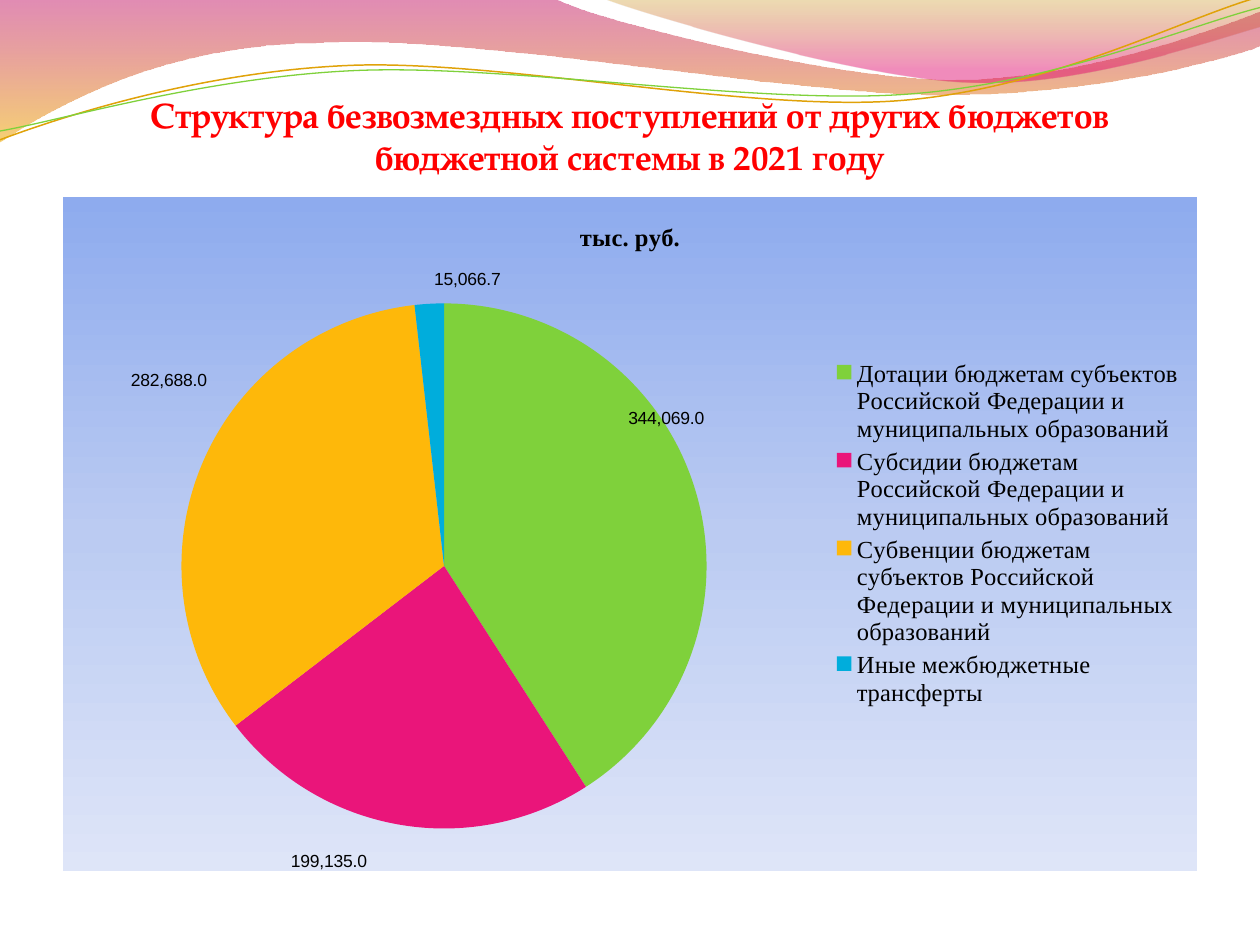
from dataclasses import dataclass
from typing import Optional

from lxml.etree import SubElement
from pptx import Presentation
from pptx.chart.data import CategoryChartData
from pptx.dml.color import RGBColor
from pptx.enum.chart import XL_CHART_TYPE, XL_LABEL_POSITION, XL_LEGEND_POSITION
from pptx.enum.text import MSO_ANCHOR, MSO_AUTO_SIZE, PP_ALIGN
from pptx.oxml import parse_xml
from pptx.oxml.ns import qn
from pptx.util import Cm, Pt

TITLE_FONT = "TeX Gyre Pagella"
CHART_FONT = "Times New Roman"
LABEL_FONT = "Arial"
UNIT = 2.54  # centimetres per unit of the wave coordinates


@dataclass
class Stop:
    position: int
    color: str
    opacity: int = 100


@dataclass
class Wave:
    """A segment holds one end point, or two control points and an end point."""
    start: tuple
    segments: list
    stops: Optional[list] = None
    line: str = ""
    width: float = 0


@dataclass
class Slice:
    name: str
    value: float
    color: str
    label_shift: tuple


WAVES = [
    Wave((0, -0.01), [
        ((4.4, -0.01),),
        ((4.76, 0.17), (6.64, 0.63), (7.58, 0.63)),
        ((8.53, 0.63), (9.58, 0.26), (10, 0.09)),
        ((10.01, 0.36),),
        ((9.83, 0.44), (8.7, 0.76), (7.46, 0.75)),
        ((6.22, 0.75), (3.82, 0.28), (2.57, 0.34)),
        ((1.29, 0.35), (0.46, 0.83), (-0.01, 1.13)),
        ((0, -0.01),),
    ], [Stop(0, "BD0059", 45), Stop(100, "F0AB00", 55)]),
    Wave((4.79, -0.01), [
        ((5.09, 0.11), (6.82, 0.62), (7.69, 0.65)),
        ((8.56, 0.69), (9.61, 0.32), (10, 0.21)),
        ((10, 0),),
        ((4.79, -0.01),),
    ], [Stop(0, "C38B00", 30), Stop(80, "E1006B", 45)]),
    Wave((0, 1.11), [
        ((0.48, 0.93), (1.58, 0.57), (2.77, 0.52)),
        ((3.95, 0.47), (5.93, 0.89), (7.13, 0.8)),
        ((8.33, 0.71), (9.38, 0.15), (9.98, -0.02)),
    ], line="E0A209", width=0.85),
    Wave((0, 1.04), [
        ((0.47, 0.96), (1.64, 0.61), (2.83, 0.56)),
        ((4.03, 0.51), (5.97, 0.83), (7.17, 0.75)),
        ((8.36, 0.67), (9.41, 0.21), (10, 0.06)),
    ], line="7FD13B", width=0.75),
]

SLICES = [
    Slice("Дотации бюджетам субъектов Российской Федерации и муниципальных образований",
          344069, "7FD13B", (-6.6, -9.2)),
    Slice("Субсидии бюджетам Российской Федерации и муниципальных образований",
          199135, "EA157A", (-2.7, 3)),
    Slice("Субвенции бюджетам субъектов Российской Федерации и муниципальных образований",
          282688, "FEB80A", (1, -10.4)),
    Slice("Иные межбюджетные трансферты", 15066.7, "00ADDC", (3.4, -1)),
]
CHART_STOPS = [Stop(0, "8EABEE"), Stop(50, "BBCBF2"), Stop(100, "DEE5F8")]


def rgb(color: str) -> RGBColor:
    return RGBColor.from_string(color)


def set_font(font, name: str, size: float, color: str = "000000", bold: bool = False) -> None:
    font.name, font.size, font.bold = name, Pt(size), bold
    font.color.rgb = rgb(color)


def gradient(stops: list):
    """Return a top-to-bottom gradient fill element."""
    stops_xml = "".join(
        f'<a:gs pos="{stop.position * 1000}"><a:srgbClr val="{stop.color}">'
        f'<a:alpha val="{stop.opacity * 1000}"/></a:srgbClr></a:gs>' for stop in stops)
    return parse_xml(
        '<a:gradFill xmlns:a="http://schemas.openxmlformats.org/drawingml/2006/main" '
        f'rotWithShape="1"><a:gsLst>{stops_xml}</a:gsLst>'
        '<a:lin ang="5400000" scaled="0"/></a:gradFill>')


def bend(sp, segments: list) -> None:
    """Turn each run of three straight steps into one Bezier curve."""
    steps = iter(list(sp._element.iter(qn("a:lnTo"))))
    for segment in segments:
        group = [next(steps) for _ in segment]
        if len(group) == 3:
            curve = SubElement(group[0].getparent(), qn("a:cubicBezTo"))
            group[0].addprevious(curve)
            for step in group:
                curve.append(step[0])
                step.getparent().remove(step)


def add_wave(s, wave: Wave) -> None:
    points = [wave.start, *(point for segment in wave.segments for point in segment)]
    vertices = [(Cm(x * UNIT), Cm(y * UNIT)) for x, y in points]
    builder = s.shapes.build_freeform(*vertices[0], scale=1.0)
    builder.add_line_segments(vertices[1:], close=bool(wave.stops))
    sp = builder.convert_to_shape()
    bend(sp, wave.segments)
    sp.shadow.inherit = False
    sp.fill.background()
    if wave.stops:
        no_fill = sp._element.spPr.find(qn("a:noFill"))
        no_fill.getparent().replace(no_fill, gradient(wave.stops))
        sp.line.fill.background()
    else:
        sp.line.color.rgb = rgb(wave.line)
        sp.line.width = Pt(wave.width)


def set_layout(parent, index: int, modes: Optional[dict] = None, **percents) -> None:
    """Place a chart part by hand, in percent of the chart."""
    for old in parent.findall(qn("c:layout")):
        parent.remove(old)
    layout = SubElement(parent, qn("c:layout"))
    parent.insert(index, layout)
    manual = SubElement(layout, qn("c:manualLayout"))
    fractions = {name: value / 100 for name, value in percents.items()}
    for name, value in {**(modes or {}), **fractions}.items():
        SubElement(manual, qn(f"c:{name}")).set("val", str(value))


def add_title(s, text: str) -> None:
    title = s.shapes.title
    s.shapes._spTree.append(title._element)
    title.left, title.top, title.width, title.height = Cm(1.27), Cm(1.94), Cm(22.86), Cm(1.63)
    tf = title.text_frame
    tf.word_wrap, tf.auto_size = True, MSO_AUTO_SIZE.NONE
    tf.vertical_anchor = MSO_ANCHOR.BOTTOM
    tf.margin_left = tf.margin_right = tf.margin_bottom = 0
    tf.margin_top = Cm(0.13)
    p = tf.paragraphs[0]
    p.alignment = PP_ALIGN.CENTER
    r = p.add_run()
    r.text = text
    set_font(r.font, TITLE_FONT, 20, "FF0000", bold=True)


def add_pie(s, name: str, slices: list) -> None:
    data = CategoryChartData(number_format="#,##0.0")
    data.categories = [item.name for item in slices]
    data.add_series(name, [item.value for item in slices])
    chart = s.shapes.add_chart(XL_CHART_TYPE.PIE, Cm(1.27), Cm(3.97),
                               Cm(22.86), Cm(13.59), data).chart
    set_font(chart.font, TITLE_FONT, 18)

    chart.has_title = True
    r = chart.chart_title.text_frame.paragraphs[0].add_run()
    r.text = name
    set_font(r.font, CHART_FONT, 14, bold=True)

    chart.has_legend = True
    legend = chart.legend
    legend.position, legend.include_in_layout = XL_LEGEND_POSITION.RIGHT, False
    set_font(legend.font, CHART_FONT, 14)
    edges = {"xMode": "edge", "yMode": "edge"}
    set_layout(legend._element, 1, edges, x=67.8, y=23.4, w=31, h=53)

    plot = chart.plots[0]
    plot.vary_by_categories = True
    set_layout(plot._element.getparent(), 0, {"layoutTarget": "inner", **edges},
               x=10.1, y=15.8, w=47, h=77.9)
    series = plot.series[0]
    for index, item in enumerate(slices):
        point = series.points[index]
        point.format.fill.solid()
        point.format.fill.fore_color.rgb = rgb(item.color)
        label = point.data_label
        set_font(label.font, LABEL_FONT, 10)
        label.position = XL_LABEL_POSITION.OUTSIDE_END
        x, y = item.label_shift
        set_layout(label._dLbl, 1, x=x, y=y)
    for leader_lines in series._element.iter(qn("c:showLeaderLines")):
        leader_lines.set("val", "0")

    chart_space = chart._chartSpace
    sp_pr = SubElement(chart_space, qn("c:spPr"))
    sp_pr.append(gradient(CHART_STOPS))
    SubElement(SubElement(sp_pr, qn("a:ln")), qn("a:noFill"))
    chart_space.find(qn("c:txPr")).addprevious(sp_pr)


def main() -> None:
    prs = Presentation()
    prs.slide_width, prs.slide_height = Cm(25.4), Cm(19.05)
    s = prs.slides.add_slide(prs.slide_layouts[5])
    for wave in WAVES:
        add_wave(s, wave)
    add_title(s, "Структура безвозмездных поступлений от других бюджетов "
                 "бюджетной системы в 2021 году")
    add_pie(s, "тыс. руб.", SLICES)
    prs.save("out.pptx")


if __name__ == "__main__":
    main()
